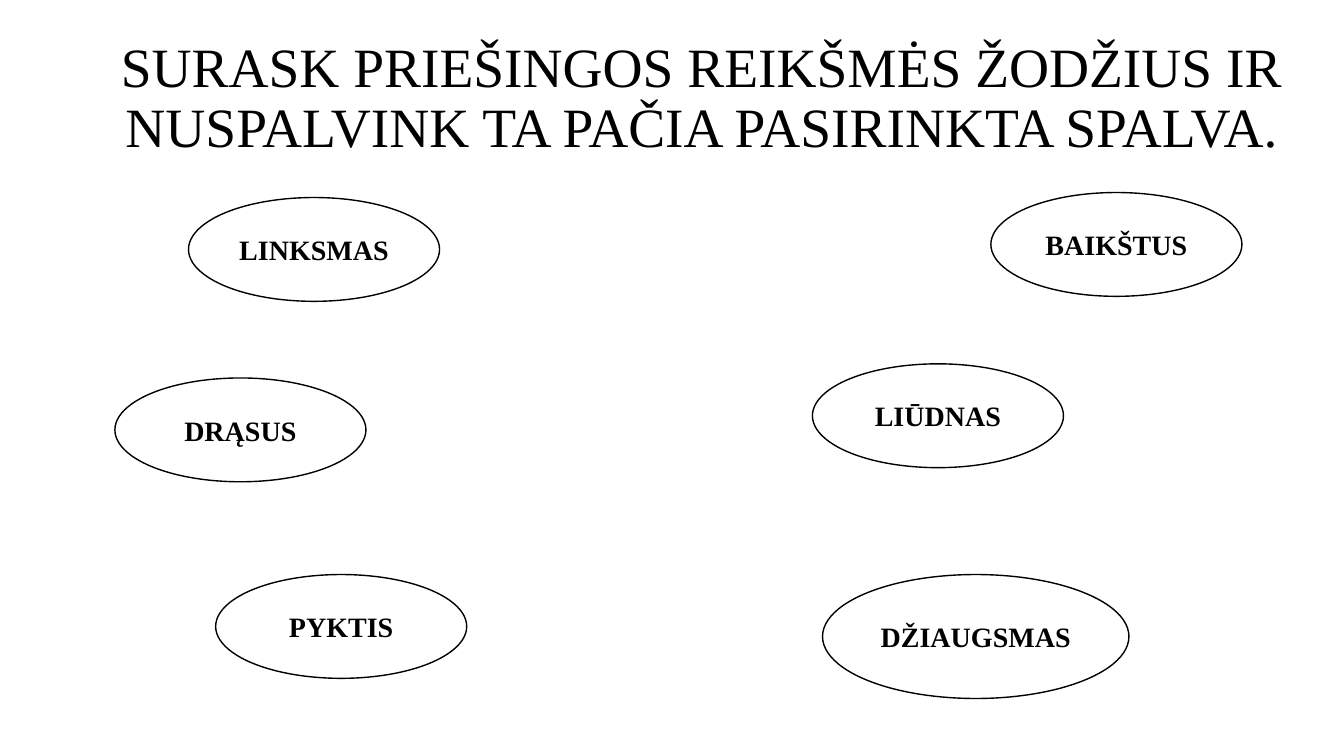
from dataclasses import dataclass

from pptx import Presentation
from pptx.dml.color import RGBColor
from pptx.enum.shapes import MSO_SHAPE
from pptx.enum.text import MSO_ANCHOR, MSO_AUTO_SIZE, PP_ALIGN
from pptx.shapes.autoshape import Shape
from pptx.slide import Slide
from pptx.util import Inches, Pt

BLACK = RGBColor(0x00, 0x00, 0x00)
WHITE = RGBColor(0xFF, 0xFF, 0xFF)
FONT_NAME = "Times New Roman"
SLIDE_WIDTH = Inches(13.333)
SLIDE_HEIGHT = Inches(7.5)
TITLE = "SURASK PRIEŠINGOS REIKŠMĖS ŽODŽIUS IR NUSPALVINK TA PAČIA PASIRINKTA SPALVA."


@dataclass(frozen=True)
class Box:
    """Position and size in percent of the slide's width and height."""

    left: float
    top: float
    width: float = 18.68
    height: float = 13.73


@dataclass(frozen=True)
class WordBubble:
    word: str
    box: Box


TITLE_BOX = Box(6.9, 1.87, 90.6, 22.67)
WORD_BUBBLES = (
    WordBubble("LINKSMAS", Box(14.03, 26.13)),
    WordBubble("DRĄSUS", Box(8.55, 50)),
    WordBubble("PYKTIS", Box(16.05, 76)),
    WordBubble("BAIKŠTUS", Box(73.73, 25.47)),
    WordBubble("LIŪDNAS", Box(60.45, 48.13)),
    WordBubble("DŽIAUGSMAS", Box(61.2, 76, 22.8, 16.4)),
)


def place(shape: Shape, box: Box) -> None:
    shape.left = round(SLIDE_WIDTH * box.left / 100)
    shape.top = round(SLIDE_HEIGHT * box.top / 100)
    shape.width = round(SLIDE_WIDTH * box.width / 100)
    shape.height = round(SLIDE_HEIGHT * box.height / 100)


def write_centred(shape: Shape, text: str, size: float, bold: bool, line_spacing: float) -> None:
    text_frame = shape.text_frame
    text_frame.text = text
    text_frame.word_wrap = True
    text_frame.auto_size = MSO_AUTO_SIZE.NONE
    text_frame.vertical_anchor = MSO_ANCHOR.MIDDLE
    paragraph = text_frame.paragraphs[0]
    paragraph.alignment = PP_ALIGN.CENTER
    paragraph.line_spacing = line_spacing
    font = paragraph.runs[0].font
    font.name = FONT_NAME
    font.size = Pt(size)
    font.bold = bold
    font.color.rgb = BLACK


def add_title(slide: Slide) -> None:
    title = slide.shapes.title
    place(title, TITLE_BOX)
    write_centred(title, TITLE, size=39.6, bold=False, line_spacing=0.9)


def add_word_bubble(slide: Slide, bubble: WordBubble) -> None:
    shape = slide.shapes.add_shape(MSO_SHAPE.OVAL, 0, 0, 0, 0)
    place(shape, bubble.box)
    shape.shadow.inherit = False
    shape.fill.solid()
    shape.fill.fore_color.rgb = WHITE
    shape.line.color.rgb = BLACK
    shape.line.width = Pt(1)
    write_centred(shape, bubble.word, size=20, bold=True, line_spacing=1.0)


def main() -> None:
    presentation = Presentation()
    presentation.slide_width = SLIDE_WIDTH
    presentation.slide_height = SLIDE_HEIGHT
    title_only = presentation.slide_layouts.get_by_name("Title Only")
    slide = presentation.slides.add_slide(title_only)
    add_title(slide)
    for bubble in WORD_BUBBLES:
        add_word_bubble(slide, bubble)
    presentation.save("out.pptx")


if __name__ == "__main__":
    main()
